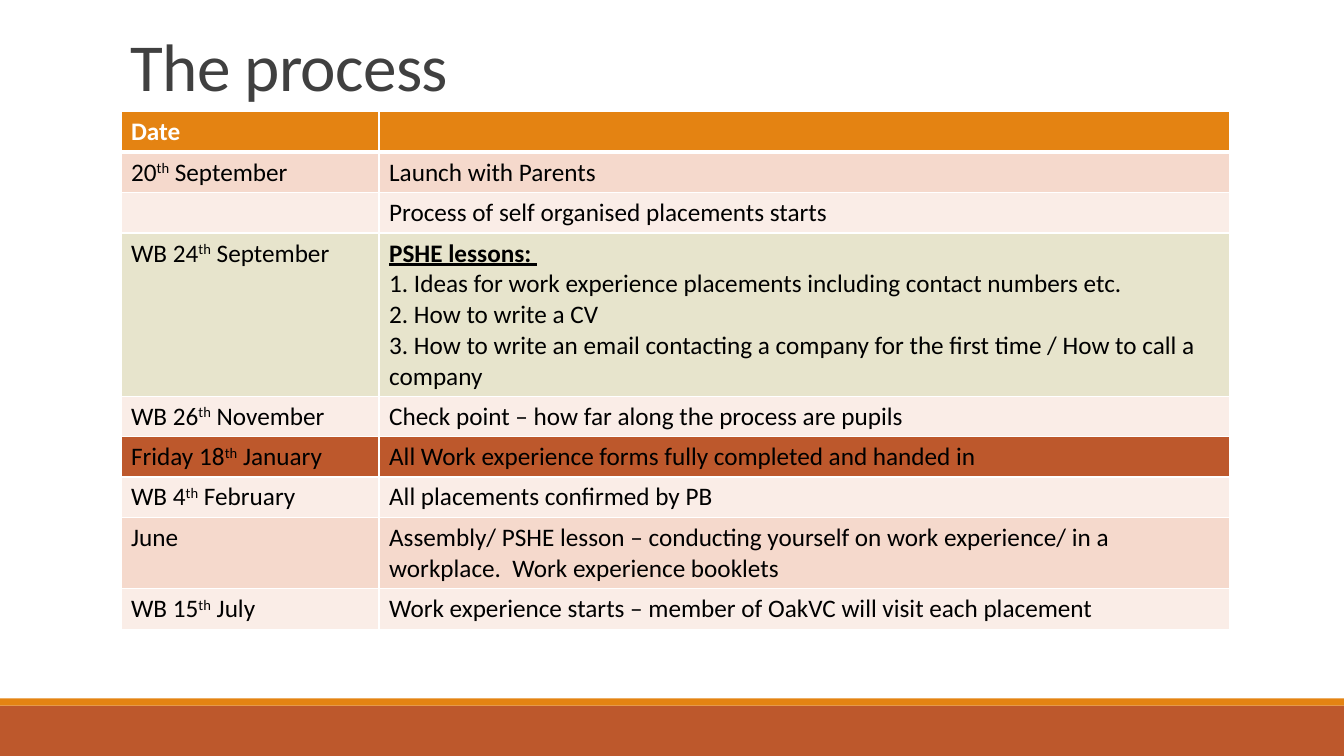
import dataclasses

import lxml.etree
import pptx
import pptx.dml.color
import pptx.enum.shapes
import pptx.enum.text
import pptx.oxml.ns
import pptx.util

PX = 9144
FONT = "Calibri"
COLORS = {
    "rust": "BD582C",
    "orange": "E48312",
    "title": "404040",
    "white": "FFFFFF",
    "black": "000000",
    "peach": "F5D9CC",
    "pale": "FAEDE7",
    "sage": "E7E4CC",
}


@dataclasses.dataclass
class Band:
    top: int
    height: int
    color: str


@dataclasses.dataclass
class Step:
    date: str
    lines: list[str]
    fill: str
    height: int = 40
    heading: bool = False


BANDS = [Band(700, 50, "rust"), Band(693, 7, "orange")]
COLUMNS = [256, 844]
STEPS = [
    Step("Date", [], "orange", heading=True),
    Step("20^th^ September", ["Launch with Parents"], "peach"),
    Step("", ["Process of self organised placements starts"], "pale"),
    Step("WB 24^th^ September", [
        "*PSHE lessons: ",
        "1. Ideas for work experience placements including contact numbers etc.",
        "2. How to write a CV",
        "3. How to write an email contacting a company for the first time / How to call a company",
    ], "sage", 162),
    Step("WB 26^th^ November", ["Check point – how far along the process are pupils"], "pale"),
    Step("Friday 18^th^ January", ["All Work experience forms fully completed and handed in"], "rust"),
    Step("WB 4^th^ February", ["All placements confirmed by PB"], "pale"),
    Step("June", [
        "Assembly/ PSHE lesson – conducting yourself on work experience/ in a workplace.  "
        "Work experience booklets",
    ], "peach", 71),
    Step("WB 15^th^ July", ["Work experience starts – member of OakVC will visit each placement"], "pale"),
]


def px(length: int) -> int:
    return length * PX


def rgb(name: str) -> pptx.dml.color.RGBColor:
    return pptx.dml.color.RGBColor.from_string(COLORS[name])


def add_span(para, text: str, size: int, color: str):
    span = para.add_run()
    span.text = text
    span.font.name = FONT
    span.font.size = pptx.util.Pt(size)
    span.font.color.rgb = rgb(color)
    return span


def write_line(para, line: str, color: str, bold: bool) -> None:
    lead = line.startswith("*")
    for index, piece in enumerate(line.removeprefix("*").split("^")):
        span = add_span(para, piece, 18, color)
        span.font.bold = bold or lead
        span.font.underline = lead
        if index % 2:
            span.font._element.set("baseline", "30000")


def set_borders(cell, widths: dict[str, int]) -> None:
    properties = cell._tc.get_or_add_tcPr()
    for index, (side, width) in enumerate(widths.items()):
        line = lxml.etree.Element(pptx.oxml.ns.qn(f"a:{side}"), w=str(pptx.util.Pt(width)))
        fill = lxml.etree.SubElement(line, pptx.oxml.ns.qn("a:solidFill"))
        lxml.etree.SubElement(fill, pptx.oxml.ns.qn("a:srgbClr"), val=COLORS["white"])
        properties.insert(index, line)


def fill_cell(cell, lines: list[str], step: Step, after_heading: bool) -> None:
    cell.fill.solid()
    cell.fill.fore_color.rgb = rgb(step.fill)
    set_borders(cell, {
        "lnL": 1,
        "lnR": 1,
        "lnT": 3 if after_heading else 1,
        "lnB": 3 if step.heading else 1,
    })
    frame = cell.text_frame
    frame.paragraphs[0].font.size = pptx.util.Pt(18)
    for index, line in enumerate(lines):
        para = frame.add_paragraph() if index else frame.paragraphs[0]
        write_line(para, line, "white" if step.heading else "black", step.heading)


def add_band(page, band: Band) -> None:
    box = page.shapes.add_shape(
        pptx.enum.shapes.MSO_SHAPE.RECTANGLE, 0, px(band.top), px(1333), px(band.height))
    box.shadow.inherit = False
    box.fill.solid()
    box.fill.fore_color.rgb = rgb(band.color)
    box.line.fill.background()


def add_title(page, text: str) -> None:
    box = page.shapes.add_textbox(px(120), px(31), px(1100), px(78))
    frame = box.text_frame
    frame.word_wrap = True
    frame.vertical_anchor = pptx.enum.text.MSO_ANCHOR.BOTTOM
    para = frame.paragraphs[0]
    para.line_spacing = 0.85
    span = add_span(para, text, 48, "title")
    span.font._element.set("spc", "-50")


def add_schedule(page, steps: list[Step]) -> None:
    height = sum(step.height for step in steps)
    table = page.shapes.add_table(
        len(steps), len(COLUMNS), px(120), px(111), px(sum(COLUMNS)), px(height)).table
    table.horz_banding = False
    for column, width in zip(table.columns, COLUMNS):
        column.width = px(width)
    for index, step in enumerate(steps):
        table.rows[index].height = px(step.height)
        dates = [step.date] if step.date else []
        for column, lines in enumerate([dates, step.lines]):
            fill_cell(table.cell(index, column), lines, step, index == 1)


def main() -> None:
    deck = pptx.Presentation()
    deck.slide_width = px(1333)
    deck.slide_height = px(750)
    page = deck.slides.add_slide(deck.slide_layouts[6])
    for band in BANDS:
        add_band(page, band)
    add_title(page, "The process")
    add_schedule(page, STEPS)
    deck.save("out.pptx")


if __name__ == "__main__":
    main()
